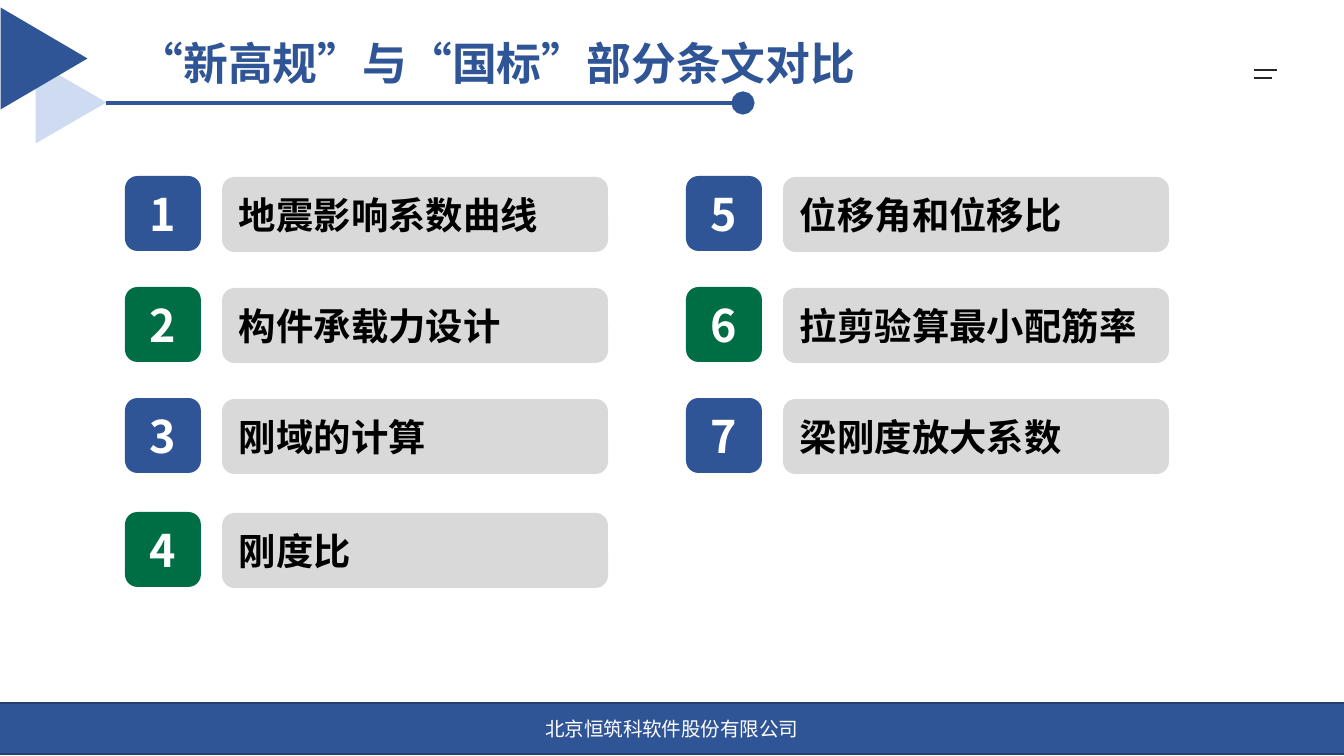
from lxml.etree import SubElement
from pptx import Presentation
from pptx.dml.color import RGBColor
from pptx.enum.shapes import MSO_CONNECTOR, MSO_SHAPE as SHAPE
from pptx.enum.text import MSO_ANCHOR as ANCHOR, PP_ALIGN as ALIGN
from pptx.oxml.ns import qn
from pptx.util import Pt

PX = 914400 / 134.4  # EMU per pixel
COLORS = {
    "blue": "2F5597", "navy": "233F70", "pale": "CFDBF0", "green": "006E44",
    "gray": "D9D9D9", "ink": "262626", "black": "000000", "white": "FFFFFF",
}
CJK = "Noto Sans CJK SC"


def px(*values):
    return [round(v * PX) for v in values]


def color(name):
    return RGBColor.from_string(COLORS[name])


class Deck:
    def __init__(self, prs):
        self.slide = prs.slides.add_slide(prs.slide_layouts[5])

    def set_text(self, sp, text, size, ink, font=CJK, bold=True,
                 align=ALIGN.LEFT, anchor=ANCHOR.MIDDLE):
        tf = sp.text_frame
        tf.word_wrap = True
        tf.vertical_anchor = anchor
        p = tf.paragraphs[0]
        p.text = text
        p.alignment = align
        p.font.size, p.font.bold, p.font.name = Pt(size), bold, font
        p.font.color.rgb = color(ink)
        SubElement(p._p.pPr.find(qn("a:defRPr")), qn("a:ea"), typeface=CJK)

    def title(self, text, box):
        sp = self.slide.shapes.title
        sp.left, sp.top, sp.width, sp.height = px(*box)
        self.set_text(sp, text, 24, "blue", font="Arial", anchor=ANCHOR.BOTTOM)

    def shape(self, kind, box, fill, line=None, rotation=0):
        sp = self.slide.shapes.add_shape(kind, *px(*box))
        sp.shadow.inherit = False
        sp.rotation = rotation
        sp.fill.solid()
        sp.fill.fore_color.rgb = color(fill)
        if line:
            sp.line.color.rgb = color(line)
            sp.line.width = Pt(1)
        else:
            sp.line.fill.background()
        return sp

    def rule(self, x1, x2, y, ink, width, oval_end=False):
        c = self.slide.shapes.add_connector(
            MSO_CONNECTOR.STRAIGHT, *px(x1, y, x2, y))
        c.line.color.rgb = color(ink)
        c.line.width = Pt(width)
        props = c._element.spPr
        if oval_end:
            SubElement(props.find(qn("a:ln")), qn("a:tailEnd"),
                       type="oval", w="lg", len="lg")
        SubElement(props, qn("a:effectLst"))

    def topic(self, number, text, x, y):
        fill = "blue" if number % 2 else "green"
        badge = self.shape(SHAPE.ROUNDED_RECTANGLE, (x, y, 76, 75), fill)
        self.set_text(badge, str(number), 24, "white", align=ALIGN.CENTER)
        label = self.shape(SHAPE.ROUNDED_RECTANGLE,
                           (x + 97, y + 1, 386, 75), "gray")
        self.set_text(label, text, 20, "black")


def main():
    prs = Presentation()
    prs.slide_width, prs.slide_height = px(1344, 756)
    deck = Deck(prs)

    # Footer band
    footer = deck.shape(SHAPE.RECTANGLE, (-1, 703, 1346, 51), "blue", "navy")
    deck.set_text(footer, "北京恒筑科软件股份有限公司", 10.5, "white",
                  font="Arial", bold=False, align=ALIGN.CENTER)

    # Title with corner triangles and underline
    deck.title("“新高规”与“国标”部分条文对比", (125, 30, 1044, 66))
    for box, fill in (((30, 67, 82, 71), "pale"), ((-7, 15, 102, 87), "blue")):
        deck.shape(SHAPE.ISOSCELES_TRIANGLE, box, fill, rotation=90)
    deck.rule(106, 743, 103, "blue", 2.5, oval_end=True)

    # Menu mark
    deck.rule(1254, 1277, 70, "ink", 1)
    deck.rule(1254, 1272, 78, "ink", 1)

    # Numbered topics, filled column by column
    topics = ["地震影响系数曲线", "构件承载力设计", "刚域的计算", "刚度比",
              "位移角和位移比", "拉剪验算最小配筋率", "梁刚度放大系数"]
    columns, rows = (125, 686), (176, 287, 398, 512)
    for i, text in enumerate(topics):
        col, row = divmod(i, len(rows))
        deck.topic(i + 1, text, columns[col], rows[row])

    prs.save("out.pptx")


if __name__ == "__main__":
    main()
